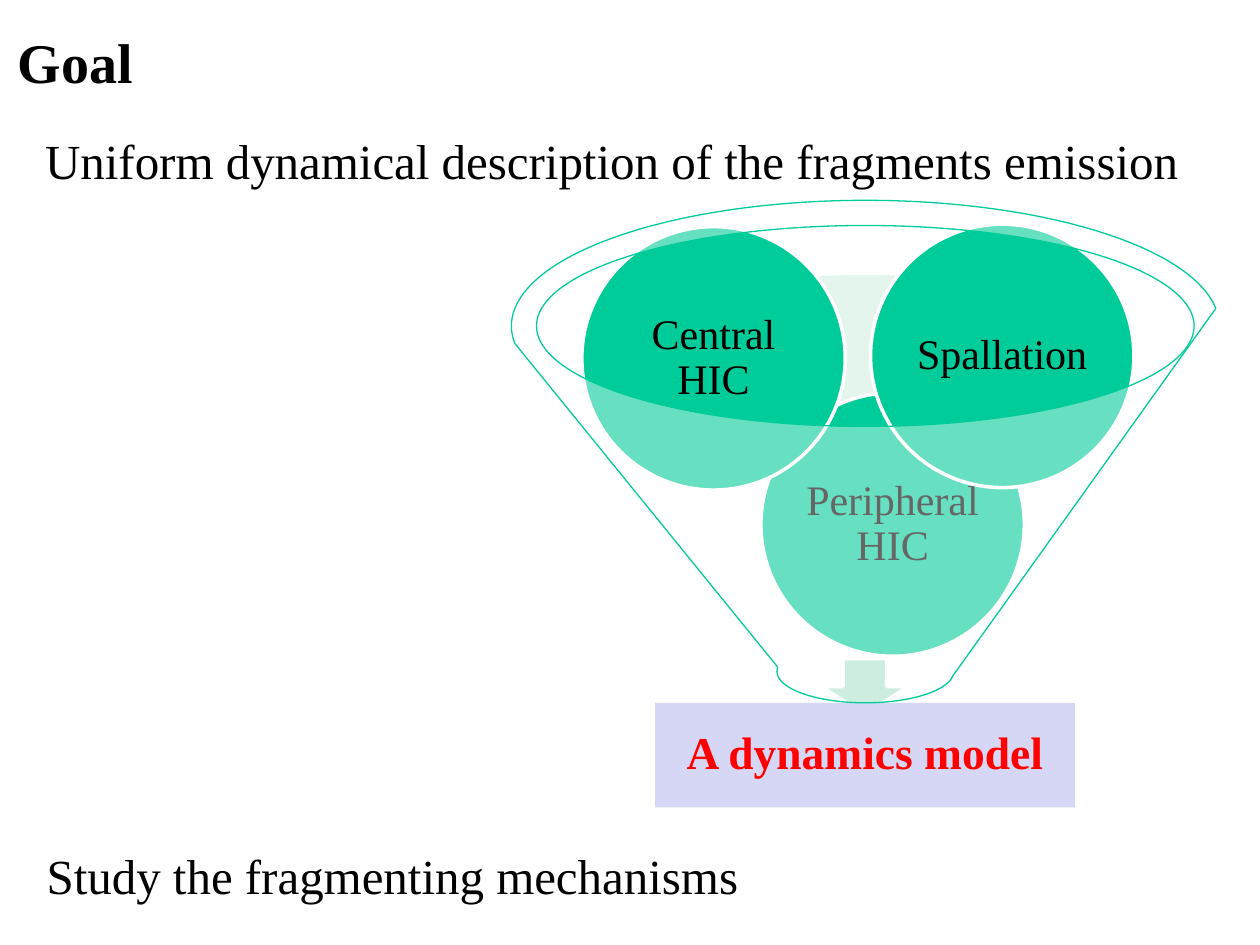
from lxml import etree
from pptx import Presentation
from pptx.dml.color import RGBColor
from pptx.enum.shapes import MSO_SHAPE
from pptx.enum.text import MSO_ANCHOR, PP_ALIGN
from pptx.oxml.ns import qn
from pptx.util import Cm, Pt

ELLIPSE, RECTANGLE = MSO_SHAPE.OVAL, MSO_SHAPE.RECTANGLE
DOWN_ARROW, FUNNEL = MSO_SHAPE.DOWN_ARROW, MSO_SHAPE.FUNNEL
MIDDLE = MSO_ANCHOR.MIDDLE
LEFT, CENTER = PP_ALIGN.LEFT, PP_ALIGN.CENTER

BLACK = RGBColor(0x00, 0x00, 0x00)
WHITE = RGBColor(0xFF, 0xFF, 0xFF)
RED = RGBColor(0xFF, 0x00, 0x00)
GREEN = RGBColor(0x00, 0xCC, 0x99)
MINT = RGBColor(0xBD, 0xE7, 0xD4)
ARROW_GREEN = RGBColor(0xAB, 0xE2, 0xCA)
LAVENDER = RGBColor(0xD6, 0xD6, 0xF5)


def write(shape, text, size, color=BLACK, bold=False, align=LEFT, spacing=1.0, inset=0.25):
    frame = shape.text_frame
    frame.text = text
    frame.word_wrap = True
    if align == CENTER:
        for side in ("left", "top", "right", "bottom"):
            setattr(frame, f"margin_{side}", Cm(inset))
    paragraph = frame.paragraphs[0]
    paragraph.alignment = align
    paragraph.line_spacing = spacing
    font_format = {"name": "Times New Roman", "size": Pt(size), "bold": bold}
    for name, value in font_format.items():
        setattr(paragraph.runs[0].font, name, value)
    paragraph.runs[0].font.color.rgb = color


def draw(kind, box, fill, line=None, width=2, opacity=100):
    shape = slide.shapes.add_shape(kind, *map(Cm, box))
    shape.shadow.inherit = False
    shape.fill.solid()
    shape.fill.fore_color.rgb = fill
    if opacity < 100:
        color = shape.fill._xPr.find(qn("a:solidFill"))[0]
        etree.SubElement(color, qn("a:alpha"), val=str(opacity * 1000))
    if line is None:
        shape.line.fill.background()
    else:
        shape.line.color.rgb = line
        shape.line.width = Pt(width)
    return shape


presentation = Presentation()
presentation.slide_width = Cm(25.4)
presentation.slide_height = Cm(19.05)
slide = presentation.slides.add_slide(presentation.slide_layouts[5])

title = slide.shapes.title
title_place = {"left": Cm(0.1), "top": Cm(0.13), "width": Cm(23.39), "height": Cm(2.21)}
for name, value in title_place.items():
    setattr(title, name, value)
title.text_frame.vertical_anchor = MIDDLE
write(title, "Goal", 32, bold=True)

statements = [
    ("Uniform dynamical description of the fragments emission", (0.66, 2.51, 24, 1.45)),
    ("Study the fragmenting mechanisms", (0.69, 16.92, 20.6, 1.45)),
]
for text, box in statements:
    write(slide.shapes.add_textbox(*map(Cm, box)), text, 28)

draw(ELLIPSE, (12.88, 5.54, 9.09, 3.15), MINT, opacity=40)
draw(DOWN_ARROW, (16.56, 13.28, 1.75, 1.12), ARROW_GREEN, WHITE)

result = draw(RECTANGLE, (13.21, 14.17, 8.46, 2.11), LAVENDER)
result.text_frame.vertical_anchor = MIDDLE
write(result, "A dynamics model", 26, RED, True, CENTER, 0.9, 0.5)

DIAMETER = 5.31
reactions = [
    ("Peripheral HIC", 15.34, 7.92),
    ("Central HIC", 11.73, 4.57),
    ("Spallation", 17.55, 4.52),
]
for text, left, top in reactions:
    circle = draw(ELLIPSE, (left, top, DIAMETER, DIAMETER), GREEN, WHITE)
    circle.text_frame.vertical_anchor = MIDDLE
    write(circle, text, 24, align=CENTER, spacing=0.9, inset=0.08)

draw(FUNNEL, (10.31, 4.04, 14.27, 10.13), WHITE, GREEN, 0.75, 40)

presentation.save("out.pptx")
